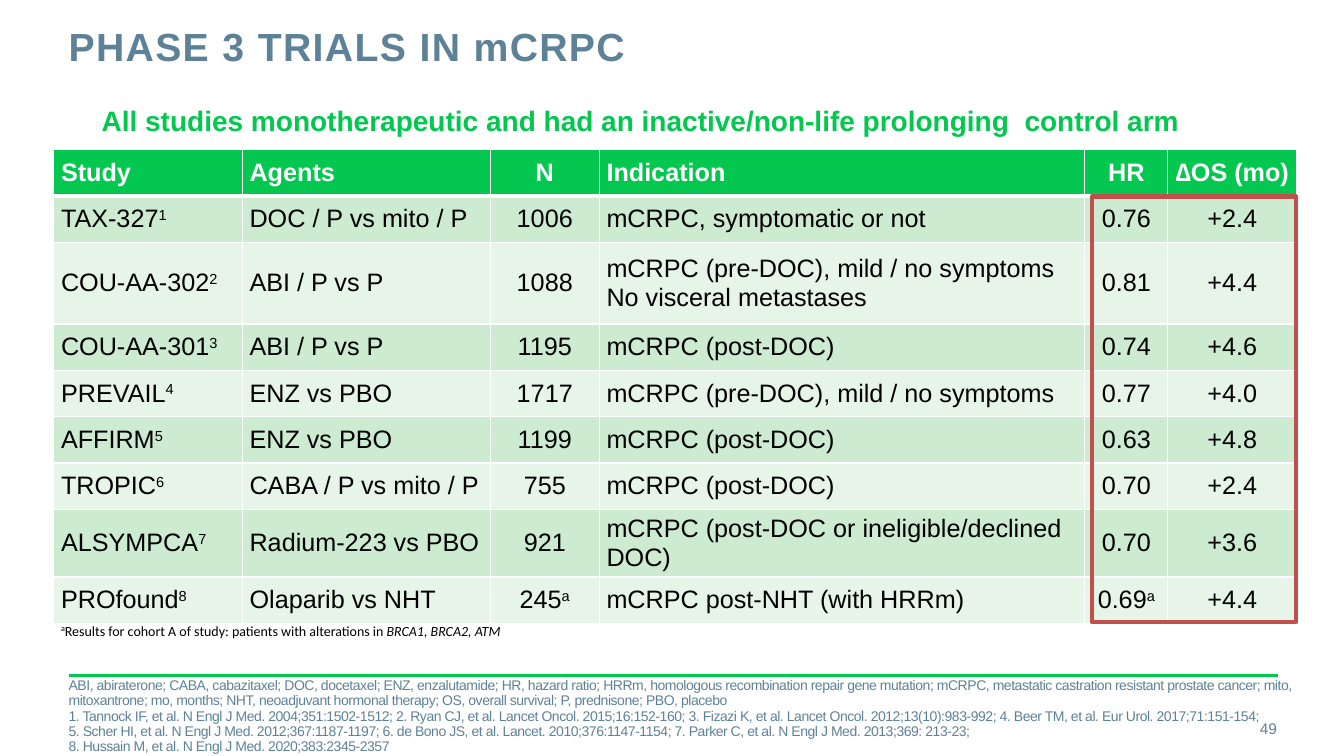
from lxml import etree
from pptx import Presentation
from pptx.dml.color import RGBColor
from pptx.enum.shapes import MSO_CONNECTOR, MSO_SHAPE
from pptx.enum.text import MSO_ANCHOR, PP_ALIGN
from pptx.oxml.ns import qn
from pptx.util import Pt

LEFT, CENTER, RIGHT = PP_ALIGN.LEFT, PP_ALIGN.CENTER, PP_ALIGN.RIGHT
TOP, MIDDLE = MSO_ANCHOR.TOP, MSO_ANCHOR.MIDDLE
STRAIGHT, RECTANGLE = MSO_CONNECTOR.STRAIGHT, MSO_SHAPE.RECTANGLE

GREEN, SLATE, RED = "03C74F", "5D8298", "C0504D"
WHITE, BLACK = "FFFFFF", "000000"
BAND_FILLS = ("CCEBD0", "E7F5E9")
SUPERSCRIPT, ITALIC = "superscript", "italic"

COLUMN_WIDTHS = (134.7, 177.1, 77.9, 346.9, 59.2, 92.2)
COLUMN_ALIGNMENTS = (LEFT, LEFT, CENTER, LEFT, CENTER, CENTER)
ROW_HEIGHT = 33.1
TALL_ROWS = {2: 58.4, 7: 45.6}

# A caret starts the superscript at the end of a cell.
TRIALS = (
    ("Study", "Agents", "N", "Indication", "HR", "∆OS (mo)"),
    ("TAX-327^1", "DOC / P vs mito / P", "1006", "mCRPC, symptomatic or not", "0.76", "+2.4"),
    ("COU-AA-302^2", "ABI / P vs P", "1088",
     "mCRPC (pre-DOC), mild / no symptoms\nNo visceral metastases", "0.81", "+4.4"),
    ("COU-AA-301^3", "ABI / P vs P", "1195", "mCRPC (post-DOC)", "0.74", "+4.6"),
    ("PREVAIL^4", "ENZ vs PBO", "1717", "mCRPC (pre-DOC), mild / no symptoms", "0.77", "+4.0"),
    ("AFFIRM^5", "ENZ vs PBO", "1199", "mCRPC (post-DOC)", "0.63", "+4.8"),
    ("TROPIC^6", "CABA / P vs mito / P", "755", "mCRPC (post-DOC)", "0.70", "+2.4"),
    ("ALSYMPCA^7", "Radium-223 vs PBO", "921",
     "mCRPC (post-DOC or ineligible/declined DOC)", "0.70", "+3.6"),
    ("PROfound^8", "Olaparib vs NHT", "245^a", "mCRPC post-NHT (with HRRm)", "0.69^a", "+4.4"),
)

REFERENCES = "\n".join((
    "ABI, abiraterone; CABA, cabazitaxel; DOC, docetaxel; ENZ, enzalutamide; HR, hazard ratio; "
    "HRRm, homologous recombination repair gene mutation; mCRPC, metastatic castration resistant "
    "prostate cancer; mito, mitoxantrone; mo, months; NHT, neoadjuvant hormonal therapy; "
    "OS, overall survival; P, prednisone; PBO, placebo",
    "1. Tannock IF, et al. N Engl J Med. 2004;351:1502-1512; 2. Ryan CJ, et al. Lancet Oncol. "
    "2015;16:152-160; 3. Fizazi K, et al. Lancet Oncol. 2012;13(10):983-992; "
    "4. Beer TM, et al. Eur Urol. 2017;71:151-154;",
    "5. Scher HI, et al. N Engl J Med. 2012;367:1187-1197; 6. de Bono JS, et al. Lancet. "
    "2010;376:1147-1154; 7. Parker C, et al. N Engl J Med. 2013;369: 213-23;",
    "8. Hussain M, et al. N Engl J Med. 2020;383:2345-2357",
))
COHORT_NOTE = (
    ("a", SUPERSCRIPT),
    ("Results for cohort A of study: patients with alterations in ", None),
    ("BRCA1, BRCA2, ATM", ITALIC),
)


def rgb(color):
    return RGBColor.from_string(color)


def write(paragraph, runs, size, color, font="Arial", bold=False, align=LEFT, tracking=0):
    """Fill a paragraph with (text, style) runs; tracking is in points."""
    for text, style in runs:
        for index, line in enumerate(text.split("\n")):
            if index:
                paragraph.add_line_break()
            run = paragraph.add_run()
            run.text = line
            properties = run._r.get_or_add_rPr()
            if tracking:
                properties.set("spc", str(round(tracking * 100)))
            if style == SUPERSCRIPT:
                properties.set("baseline", "30000")
            elif style == ITALIC:
                run.font.italic = True
    paragraph.alignment = align
    paragraph.font.name = font
    paragraph.font.size = Pt(size)
    paragraph.font.bold = bold
    paragraph.font.color.rgb = rgb(color)


def add_text(slide, box, runs, size, color, anchor=TOP, inset=(0, 0), wrap=True,
             line_spacing=None, **style):
    shape = slide.shapes.add_textbox(*map(Pt, box))
    frame = shape.text_frame
    frame.word_wrap = wrap
    frame.vertical_anchor = anchor
    frame.margin_left = frame.margin_right = Pt(inset[0])
    frame.margin_top = frame.margin_bottom = Pt(inset[1])
    paragraph = frame.paragraphs[0]
    write(paragraph, runs, size, color, **style)
    if line_spacing:
        paragraph.line_spacing = line_spacing


def set_borders(cell, bottom_width):
    properties = cell._tc.get_or_add_tcPr()
    for side, width in (("L", 1), ("R", 1), ("T", 1), ("B", bottom_width)):
        border = etree.SubElement(properties, qn(f"a:ln{side}"), w=str(Pt(width)))
        fill = etree.SubElement(border, qn("a:solidFill"))
        etree.SubElement(fill, qn("a:srgbClr"), val=WHITE)


def fill_cell(cell, text, header, fill, align):
    set_borders(cell, 3 if header else 1)
    cell.fill.solid()
    cell.fill.fore_color.rgb = rgb(fill)
    cell.vertical_anchor = MIDDLE
    cell.margin_left = cell.margin_right = Pt(5.2)
    cell.margin_top = cell.margin_bottom = Pt(2.6)
    body, _, mark = text.partition("^")
    runs = [(body, None)] + ([(mark, SUPERSCRIPT)] if mark else [])
    write(cell.text_frame.paragraphs[0], runs, 18, WHITE if header else BLACK,
          bold=header, align=align)


def add_trial_table(slide):
    heights = [TALL_ROWS.get(row, ROW_HEIGHT) for row in range(len(TRIALS))]
    table = slide.shapes.add_table(
        len(TRIALS), len(COLUMN_WIDTHS), Pt(38.4), Pt(106.9),
        Pt(sum(COLUMN_WIDTHS)), Pt(sum(heights))).table
    for column, width in zip(table.columns, COLUMN_WIDTHS):
        column.width = Pt(width)
    for row, (height, texts) in enumerate(zip(heights, TRIALS)):
        table.rows[row].height = Pt(height)
        fill = BAND_FILLS[(row - 1) % 2] if row else GREEN
        for column, (text, align) in enumerate(zip(texts, COLUMN_ALIGNMENTS)):
            fill_cell(table.cell(row, column), text, row == 0, fill, align)


def add_rule(slide, left, right, y):
    rule = slide.shapes.add_connector(STRAIGHT, Pt(left), Pt(y), Pt(right), Pt(y))
    rule.line.color.rgb = rgb(GREEN)
    rule.line.width = Pt(2)
    etree.SubElement(rule._element.spPr, qn("a:effectLst"))


def add_frame(slide, box):
    frame = slide.shapes.add_shape(RECTANGLE, *map(Pt, box))
    frame.shadow.inherit = False
    frame.fill.background()
    frame.line.color.rgb = rgb(RED)
    frame.line.width = Pt(3)


def main():
    presentation = Presentation()
    presentation.slide_width, presentation.slide_height = Pt(960), Pt(540)
    slide = presentation.slides.add_slide(presentation.slide_layouts[6])

    add_rule(slide, 49, 913, 482.6)
    add_text(slide, (49, 19.4, 688.3, 63.4), [("PHASE 3 TRIALS IN mCRPC", None)], 28, SLATE,
             bold=True, tracking=1, line_spacing=Pt(30))
    add_text(slide, (49, 497.5, 877, 28.8), [(REFERENCES, None)], 10, SLATE,
             anchor=MIDDLE, tracking=-0.3, line_spacing=0.9)
    add_trial_table(slide)
    add_frame(slide, (779.8, 140.4, 146.2, 303.8))
    add_text(slide, (850.3, 506.2, 61.9, 28.8), [("49", None)], 11, SLATE,
             anchor=MIDDLE, align=RIGHT)
    add_text(slide, (40.3, 445.7, 320.4, 10.8), COHORT_NOTE, 10, BLACK, font="Calibri",
             wrap=False, align=CENTER, line_spacing=0.9)
    add_text(slide, (65.5, 70.6, 784.8, 31.7),
             [("All studies monotherapeutic and had an inactive/non-life prolonging  control arm",
               None)],
             20, GREEN, bold=True, inset=(7.2, 3.6), wrap=False)
    presentation.save("out.pptx")


if __name__ == "__main__":
    main()
